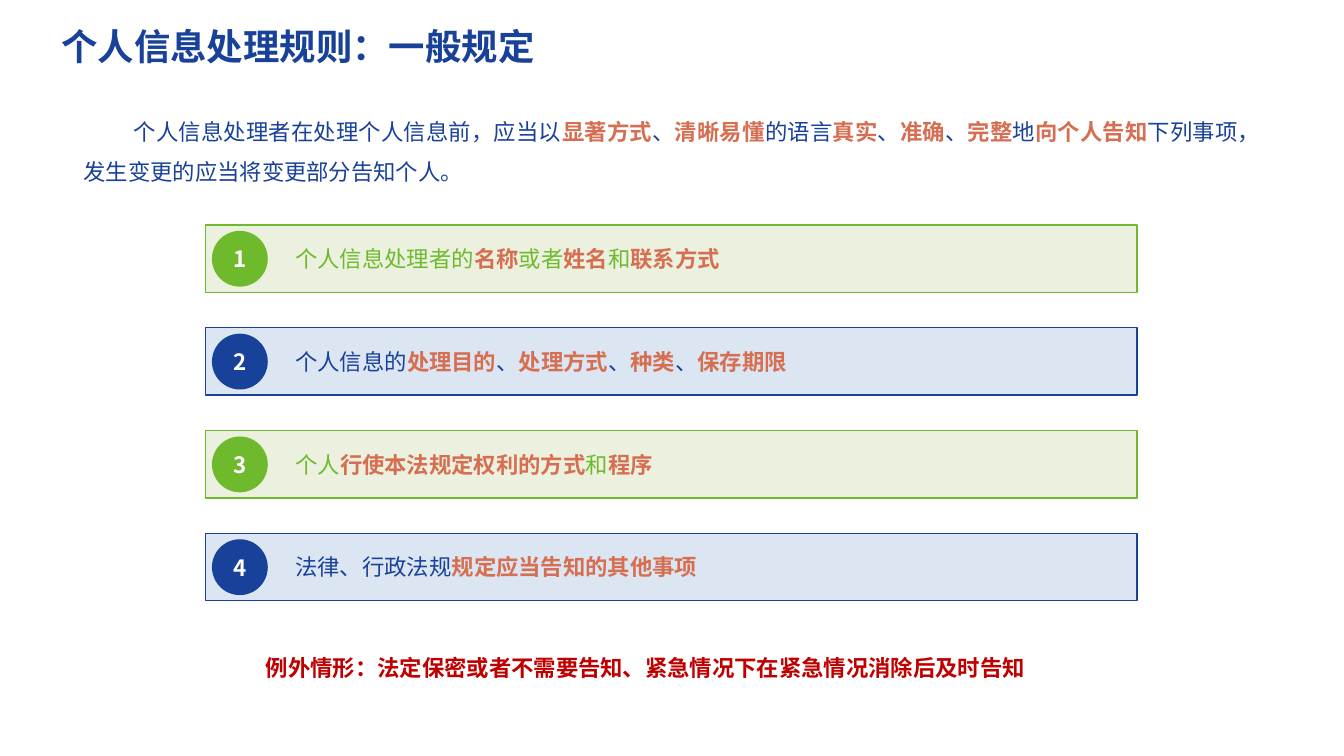
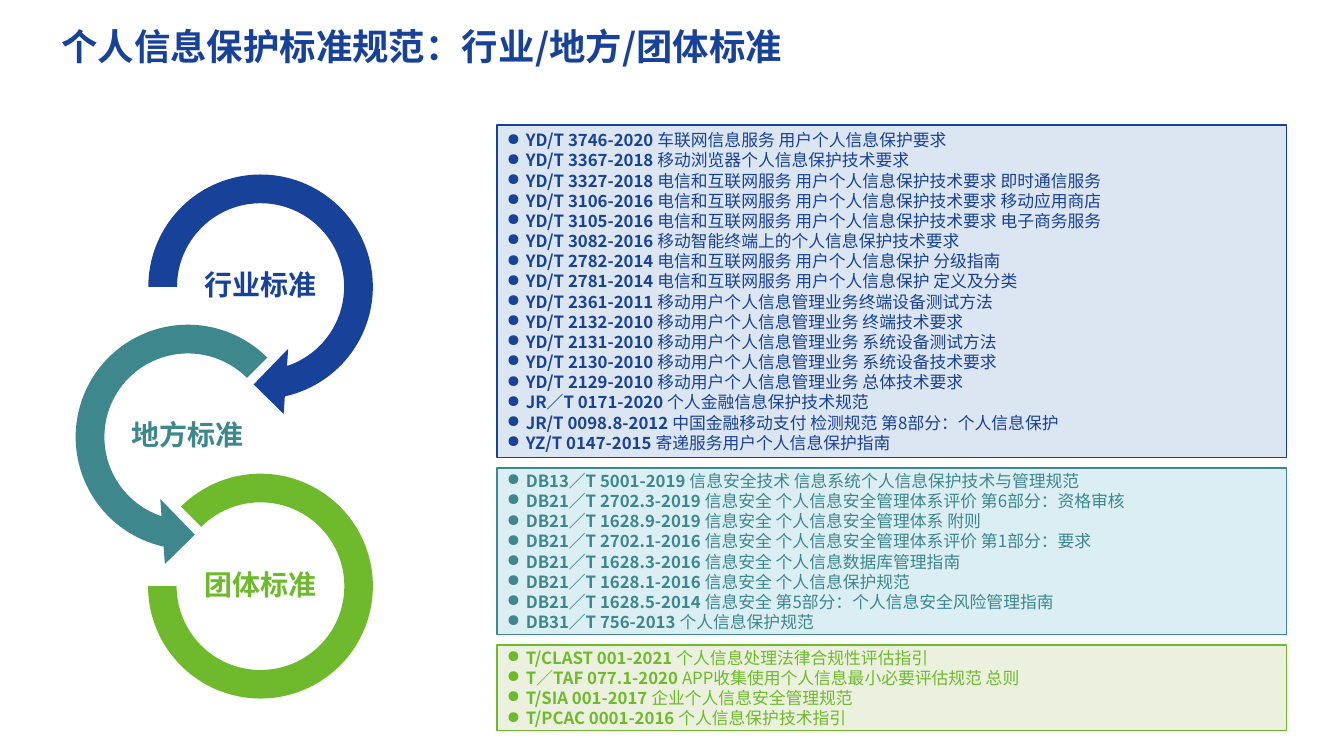
from dataclasses import dataclass

from lxml import etree
from pptx import Presentation
from pptx.dml import color
from pptx.enum import shapes, text
from pptx.oxml import ns
from pptx.util import Pt

FONT = "Noto Sans CJK SC"
COLORS = {
    "blue": "184199", "teal": "3D878D", "green": "6FBA2C",
    "pale_blue": "DCE6F2", "pale_teal": "DBEEF4", "pale_green": "EBF1DE",
    "accent": "D66F52", "warning": "C00000", "white": "FFFFFF",
}
SHAPE = shapes.MSO_SHAPE
ALIGN = text.PP_ALIGN
MIDDLE = text.MSO_ANCHOR.MIDDLE


@dataclass(frozen=True)
class Box:
    x: float
    y: float
    w: float
    h: float


@dataclass(frozen=True)
class Ring:
    kind: SHAPE
    box: Box
    adjustments: tuple[float, ...]
    color: str
    label: str
    label_x: float


@dataclass(frozen=True)
class Panel:
    height: float
    color: str
    standards: tuple[str, ...]


INTRO = ("个人信息处理者在处理个人信息前，应当以|显著方式|、|清晰易懂|的语言|真实|、|准确|、|完整|地|"
         "向个人告知|下列事项，发生变更的应当将变更部分告知个人。")
NOTICE_ITEMS = (
    "个人信息处理者的|名称|或者|姓名|和|联系方式",
    "个人信息的|处理目的|、|处理方式|、|种类|、|保存期限",
    "个人|行使本法规定权利的方式|和|程序",
    "法律、行政法规|规定应当告知的其他事项",
)
EXCEPTION = "例外情形：法定保密或者不需要告知、紧急情况下在紧急情况消除后及时告知"

RINGS = (
    Ring(SHAPE.CIRCULAR_ARROW, Box(92.9, 111.6, 186.5, 186.5),
         (0.11, 11.42, 45, 108, 0.125), "blue", "行业标准", 139.2),
    Ring(SHAPE.LEFT_CIRCULAR_ARROW, Box(41, 218.9, 186.5, 186.5),
         (0.11, 11.42, 63, 189, 0.125), "teal", "地方标准", 87.1),
    Ring(SHAPE.BLOCK_ARC, Box(105.8, 338.4, 160.6, 160.6),
         (135, 108, 0.127), "green", "团体标准", 139.2),
)
PANELS = (
    Panel(237.6, "blue", (
        "YD/T 3746-2020|车联网信息服务 用户个人信息保护要求",
        "YD/T 3367-2018|移动浏览器个人信息保护技术要求",
        "YD/T 3327-2018|电信和互联网服务 用户个人信息保护技术要求 即时通信服务",
        "YD/T 3106-2016|电信和互联网服务 用户个人信息保护技术要求 移动应用商店",
        "YD/T 3105-2016|电信和互联网服务 用户个人信息保护技术要求 电子商务服务",
        "YD/T 3082-2016|移动智能终端上的个人信息保护技术要求",
        "YD/T 2782-2014|电信和互联网服务 用户个人信息保护 分级指南",
        "YD/T 2781-2014|电信和互联网服务 用户个人信息保护 定义及分类",
        "YD/T 2361-2011|移动用户个人信息管理业务终端设备测试方法",
        "YD/T 2132-2010|移动用户个人信息管理业务 终端技术要求",
        "YD/T 2131-2010|移动用户个人信息管理业务 系统设备测试方法",
        "YD/T 2130-2010|移动用户个人信息管理业务 系统设备技术要求",
        "YD/T 2129-2010|移动用户个人信息管理业务 总体技术要求",
        "JR∕T 0171-2020|个人金融信息保护技术规范",
        "JR/T 0098.8-2012|中国金融移动支付 检测规范 第8部分：个人信息保护",
        "YZ/T 0147-2015|寄递服务用户个人信息保护指南",
    )),
    Panel(118.8, "teal", (
        "DB13∕T 5001-2019|信息安全技术 信息系统个人信息保护技术与管理规范",
        "DB21∕T 2702.3-2019|信息安全 个人信息安全管理体系评价 第6部分：资格审核",
        "DB21∕T 1628.9-2019|信息安全 个人信息安全管理体系 附则",
        "DB21∕T 2702.1-2016|信息安全 个人信息安全管理体系评价 第1部分：要求",
        "DB21∕T 1628.3-2016|信息安全 个人信息数据库管理指南",
        "DB21∕T 1628.1-2016|信息安全 个人信息保护规范",
        "DB21∕T 1628.5-2014|信息安全 第5部分：个人信息安全风险管理指南",
        "DB31∕T 756-2013|个人信息保护规范",
    )),
    Panel(61.2, "green", (
        "T/CLAST 001-2021|个人信息处理法律合规性评估指引",
        "T∕TAF 077.1-2020|APP收集使用个人信息最小必要评估规范 总则",
        "T/SIA 001-2017|企业个人信息安全管理规范",
        "T/PCAC 0001-2016|个人信息保护技术指引",
    )),
)


def rgb(name: str) -> color.RGBColor:
    return color.RGBColor.from_string(COLORS[name])


def add_run(p, content: str, size: float, col: str, bold: bool = False) -> None:
    r = p.add_run()
    r.text = content
    f = r.font
    f.name, f.size, f.bold = FONT, Pt(size), bold
    f.color.rgb = rgb(col)
    etree.SubElement(f._element, ns.qn("a:ea")).set("typeface", FONT)


def add_emphasis(p, marked: str, col: str) -> None:
    for i, part in enumerate(marked.split("|")):
        add_run(p, part, 16, "accent" if i % 2 else col, bool(i % 2))


def set_indent(p, first: float, left: float = 0) -> None:
    pPr = p._p.get_or_add_pPr()
    pPr.set("marL", str(Pt(left)))
    pPr.set("indent", str(Pt(first)))


def add_shape(s, kind: SHAPE, box: Box, fill: str, line: str | None = None):
    sp = s.shapes.add_shape(kind, Pt(box.x), Pt(box.y), Pt(box.w), Pt(box.h))
    sp.shadow.inherit = False
    sp.fill.solid()
    sp.fill.fore_color.rgb = rgb(fill)
    if line:
        sp.line.color.rgb = rgb(line)
        sp.line.width = Pt(1)
    else:
        sp.line.fill.background()
    tf = sp.text_frame
    tf.word_wrap = True
    tf.vertical_anchor = MIDDLE
    tf.paragraphs[0].alignment = ALIGN.LEFT
    return sp


def add_text(s, box: Box, align: ALIGN, spacing: float):
    tf = s.shapes.add_textbox(Pt(box.x), Pt(box.y), Pt(box.w), Pt(box.h)).text_frame
    tf.word_wrap = True
    p = tf.paragraphs[0]
    p.alignment, p.line_spacing = align, spacing
    return tf, p


def add_slide(prs, title: str):
    s = prs.slides.add_slide(prs.slide_layouts[6])
    tf, p = add_text(s, Box(36.7, 18, 612, 33.8), ALIGN.LEFT, 0.9)
    tf.margin_top = tf.margin_bottom = Pt(3)
    add_run(p, title, 26, "blue", True)
    return s


def add_notice_row(s, index: int, marked: str) -> None:
    col = ("green", "blue")[index % 2]
    y = 160.6 + index * 73.44
    bar = add_shape(s, SHAPE.RECTANGLE, Box(146.9, y, 665.3, 48.2), f"pale_{col}", col)
    p = bar.text_frame.paragraphs[0]
    set_indent(p, 57)
    add_emphasis(p, marked, col)
    badge = add_shape(s, SHAPE.OVAL, Box(151.9, y + 4.8, 38.9, 38.9), col, col)
    p = badge.text_frame.paragraphs[0]
    p.alignment = ALIGN.CENTER
    add_run(p, str(index + 1), 16, "white", True)


def add_ring(s, ring: Ring, label_y: float) -> None:
    sp = add_shape(s, ring.kind, ring.box, ring.color)
    for i, value in enumerate(ring.adjustments):
        sp.adjustments[i] = value
    tf, p = add_text(s, Box(ring.label_x, label_y, 93.6, 37.4), ALIGN.CENTER, 0.9)
    tf.vertical_anchor = MIDDLE
    tf.margin_left = tf.margin_right = tf.margin_top = tf.margin_bottom = Pt(1)
    add_run(p, ring.label, 20, ring.color, True)


def add_panel(s, panel: Panel, y: float) -> None:
    sp = add_shape(s, SHAPE.RECTANGLE, Box(355, y, 563.8, panel.height),
                   f"pale_{panel.color}", panel.color)
    tf = sp.text_frame
    for i, standard in enumerate(panel.standards):
        p = tf.add_paragraph() if i else tf.paragraphs[0]
        p.alignment = ALIGN.LEFT
        set_indent(p, -13.5, 13.5)
        etree.SubElement(p._p.get_or_add_pPr(), ns.qn("a:buChar")).set("char", "●")
        code, name = standard.split("|")
        add_run(p, f"{code} ", 12, panel.color, True)
        add_run(p, name, 12, panel.color)


def build_rules(prs) -> None:
    s = add_slide(prs, "个人信息处理规则：一般规定")
    paragraphs = ((Box(52.6, 71.3, 854.6, 64), INTRO, "blue", False),
                  (Box(146.9, 454.3, 665.3, 38.9), EXCEPTION, "warning", True))
    for box, content, col, bold in paragraphs:
        _, p = add_text(s, box, ALIGN.JUSTIFY, 1.5)
        set_indent(p, 36)
        if bold:
            add_run(p, content, 16, col, True)
        else:
            add_emphasis(p, content, col)
    for i, item in enumerate(NOTICE_ITEMS):
        add_notice_row(s, i, item)


def build_standards(prs) -> None:
    s = add_slide(prs, "个人信息保护标准规范：行业/地方/团体标准")
    for i, ring in enumerate(RINGS):
        add_ring(s, ring, 185.8 + i * 107.3)
    y = 89.3
    for panel in PANELS:
        add_panel(s, panel, y)
        y += panel.height + 7.5


def main() -> None:
    prs = Presentation()
    prs.slide_width, prs.slide_height = Pt(960), Pt(540)
    build_rules(prs)
    build_standards(prs)
    prs.save("out.pptx")


if __name__ == "__main__":
    main()
